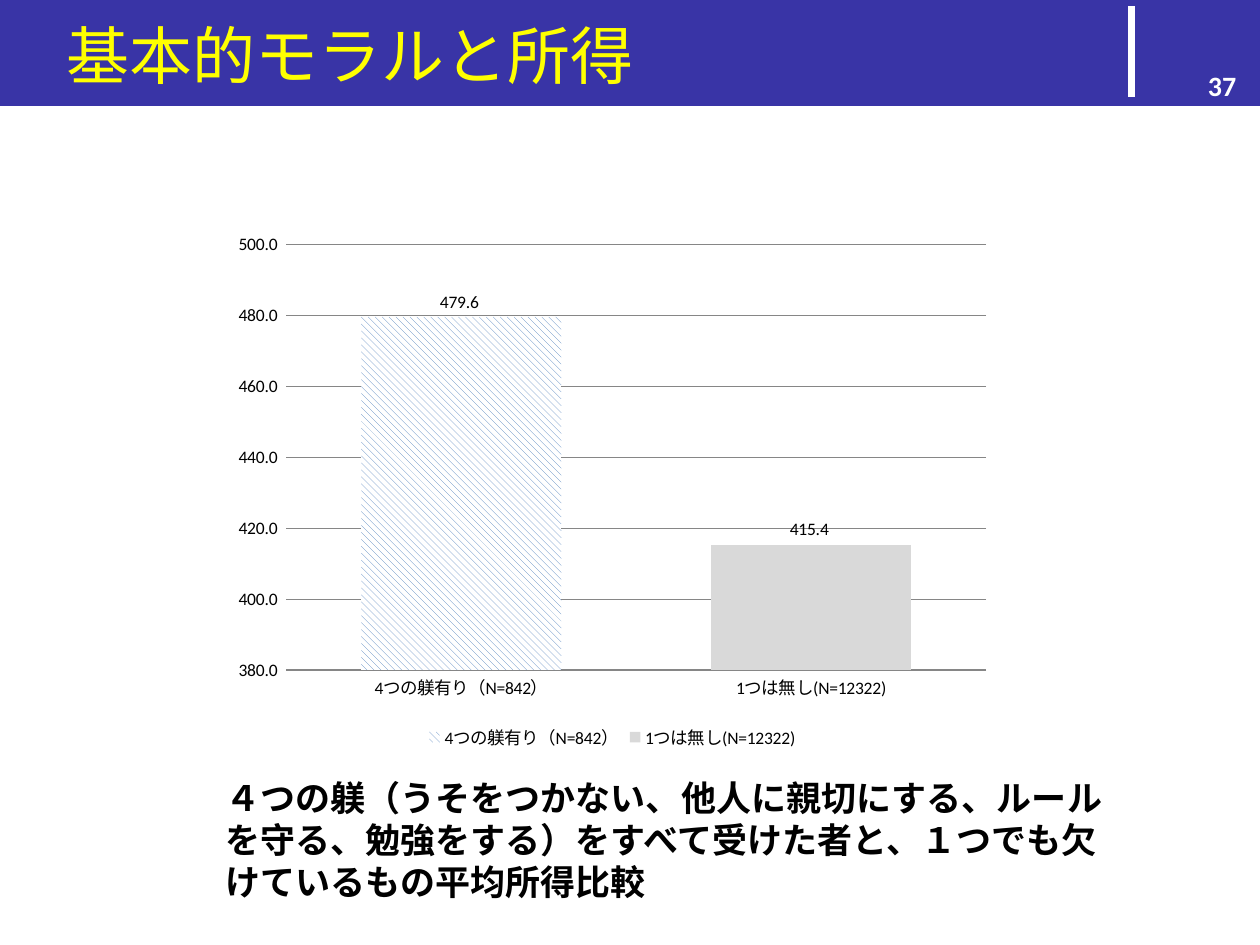
import dataclasses

import pptx
import pptx.chart.data
import pptx.dml.color
import pptx.enum.chart
import pptx.enum.dml
import pptx.enum.shapes
import pptx.enum.text
import pptx.oxml.ns
import pptx.util
from lxml import etree

Inches = pptx.util.Inches
RGB = pptx.dml.color.RGBColor.from_string


@dataclasses.dataclass(frozen=True)
class Theme:
    font: str = "Calibri"
    band: str = "3934A6"
    title: str = "FFFF00"
    light: str = "FFFFFF"
    dark: str = "000000"
    grid: str = "868686"
    hatch: str = "4F81BD"
    gray: str = "D9D9D9"
    title_size: int = 36
    body_size: int = 20
    number_size: int = 16
    chart_size: int = 10


THEME = Theme()


def style_font(font, size, color, bold=False):
    font.name = THEME.font
    font.size = pptx.util.Pt(size)
    font.bold = bold
    font.color.rgb = RGB(color)


def add_text(slide, box, text, size, color, bold=False, align="LEFT", anchor="MIDDLE"):
    sp = slide.shapes.add_textbox(*map(Inches, box))
    tf = sp.text_frame
    tf.word_wrap = True
    tf.vertical_anchor = pptx.enum.text.MSO_ANCHOR[anchor]
    p = tf.paragraphs[0]
    p.alignment = pptx.enum.text.PP_ALIGN[align]
    r = p.add_run()
    r.text = text
    style_font(r.font, size, color, bold)
    rpr = r.font._element
    ea = etree.SubElement(rpr, pptx.oxml.ns.qn("a:ea"))
    ea.set("typeface", THEME.font)
    return sp


def add_band(slide, box):
    sp = slide.shapes.add_shape(
        pptx.enum.shapes.MSO_SHAPE.RECTANGLE, *map(Inches, box))
    sp.shadow.inherit = False
    sp.fill.solid()
    sp.fill.fore_color.rgb = RGB(THEME.band)
    sp.line.fill.background()


def add_header(slide, box, title, number):
    x, y, w, h = box
    split = 7.84
    add_band(slide, (x, y, split, h))
    add_band(slide, (x + split, y, w - split, h))
    rule_x = Inches(x + 8.98)
    rule = slide.shapes.add_connector(
        pptx.enum.shapes.MSO_CONNECTOR.STRAIGHT,
        rule_x, Inches(y + 0.05), rule_x, Inches(y + 0.77))
    rule.line.color.rgb = RGB(THEME.light)
    rule.line.width = pptx.util.Pt(3.5)
    etree.SubElement(rule._element.spPr, pptx.oxml.ns.qn("a:effectLst"))
    add_text(slide, (x + 0.43, y + 0.08, 8.16, 0.7), title,
             THEME.title_size, THEME.title)
    add_text(slide, (x + 7.58, y + 0.42, 2.33, 0.52), number,
             THEME.number_size, THEME.light, bold=True, align="RIGHT")


def style_axes(chart):
    none = pptx.enum.chart.XL_TICK_MARK.NONE
    for axis in (chart.category_axis, chart.value_axis):
        axis.major_tick_mark = none
        axis.minor_tick_mark = none
    chart.category_axis.format.line.color.rgb = RGB(THEME.grid)
    values = chart.value_axis
    values.minimum_scale, values.maximum_scale, values.major_unit = 380, 500, 20
    values.format.line.fill.background()
    values.has_major_gridlines = True
    values.major_gridlines.format.line.color.rgb = RGB(THEME.grid)
    values.tick_labels.number_format = "0.0_ "
    values.tick_labels.number_format_is_linked = False


def style_bars(plot):
    plot.gap_width = 75
    plot.overlap = -25
    plot.vary_by_categories = True
    series = plot.series[0]
    series.invert_if_negative = False
    hatched, plain = (series.points[i].format.fill for i in range(2))
    for fill in (series.format.fill, hatched):
        fill.patterned()
        fill.pattern = pptx.enum.dml.MSO_PATTERN.WIDE_DOWNWARD_DIAGONAL
        fill.fore_color.rgb = RGB(THEME.hatch)
        fill.back_color.rgb = RGB(THEME.light)
    plain.solid()
    plain.fore_color.rgb = RGB(THEME.gray)
    labels = series.data_labels
    labels.show_value = True
    labels.number_format = "0.0_ "
    labels.number_format_is_linked = False
    labels.position = pptx.enum.chart.XL_LABEL_POSITION.OUTSIDE_END


def add_income_chart(slide, box):
    data = pptx.chart.data.CategoryChartData()
    data.categories = ["4つの躾有り（N=842）", "1つは無し(N=12322)"]
    data.add_series("平均所得", [479.6, 415.4])
    chart = slide.shapes.add_chart(
        pptx.enum.chart.XL_CHART_TYPE.COLUMN_CLUSTERED,
        *map(Inches, box), data).chart
    style_font(chart.font, THEME.chart_size, THEME.dark)
    chart.has_title = False
    chart.has_legend = True
    chart.legend.position = pptx.enum.chart.XL_LEGEND_POSITION.BOTTOM
    chart.legend.include_in_layout = False
    style_axes(chart)
    style_bars(chart.plots[0])


def add_caption(slide, box, text):
    add_text(slide, box, text, THEME.body_size, THEME.dark, bold=True, anchor="TOP")


def main():
    prs = pptx.Presentation()
    prs.slide_width, prs.slide_height = Inches(10), Inches(7.5)
    slide = prs.slides.add_slide(prs.slide_layouts[6])
    add_header(slide, (0, 0, 10, 0.84), "基本的モラルと所得", "37")
    add_income_chart(slide, (1.77, 1.78, 6.18, 4.21))
    add_caption(slide, (1.69, 6.11, 7.17, 1.11),
                "４つの躾（うそをつかない、他人に親切にする、ルールを守る、勉強をする）"
                "をすべて受けた者と、１つでも欠けているもの平均所得比較")
    prs.save("out.pptx")


if __name__ == "__main__":
    main()
